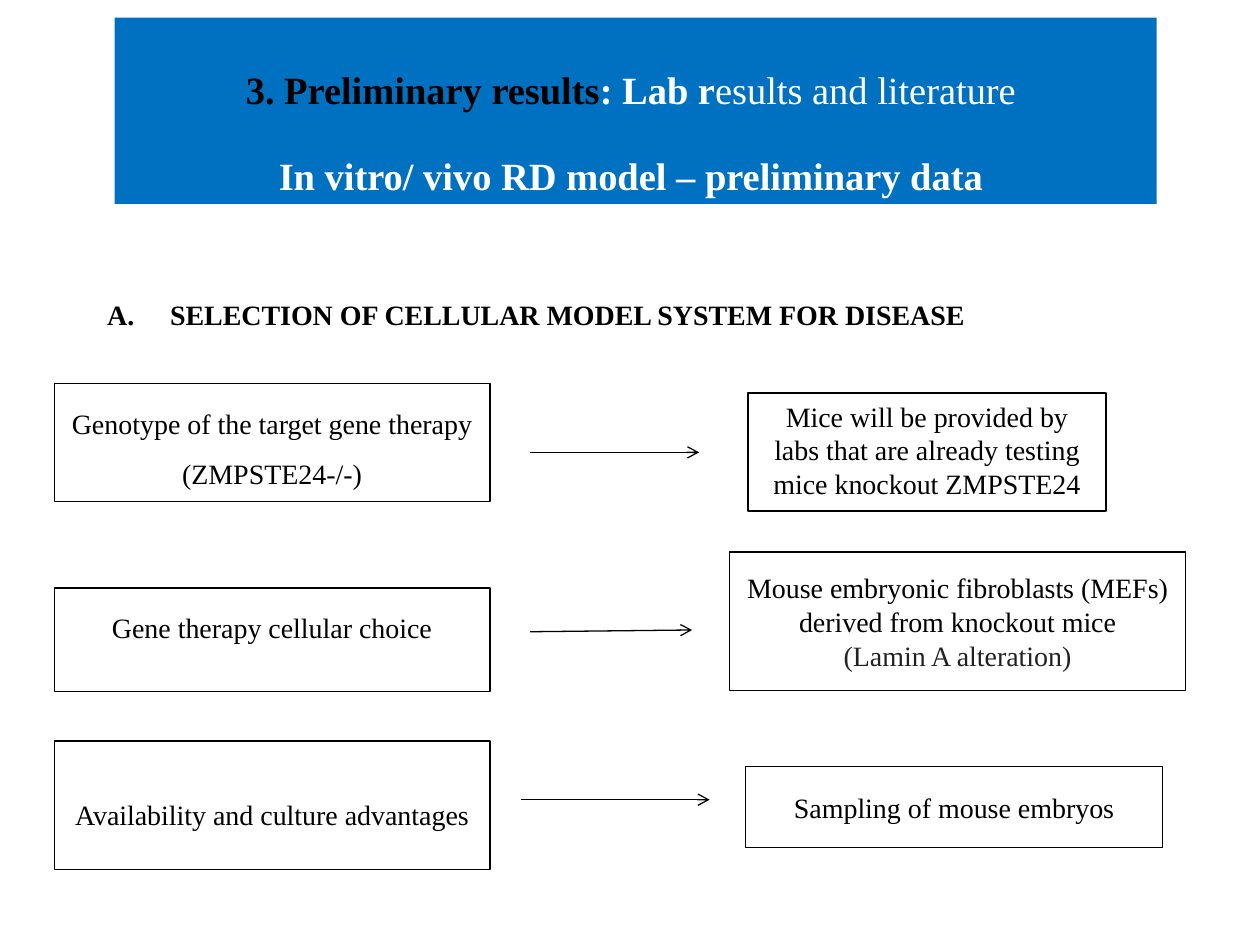
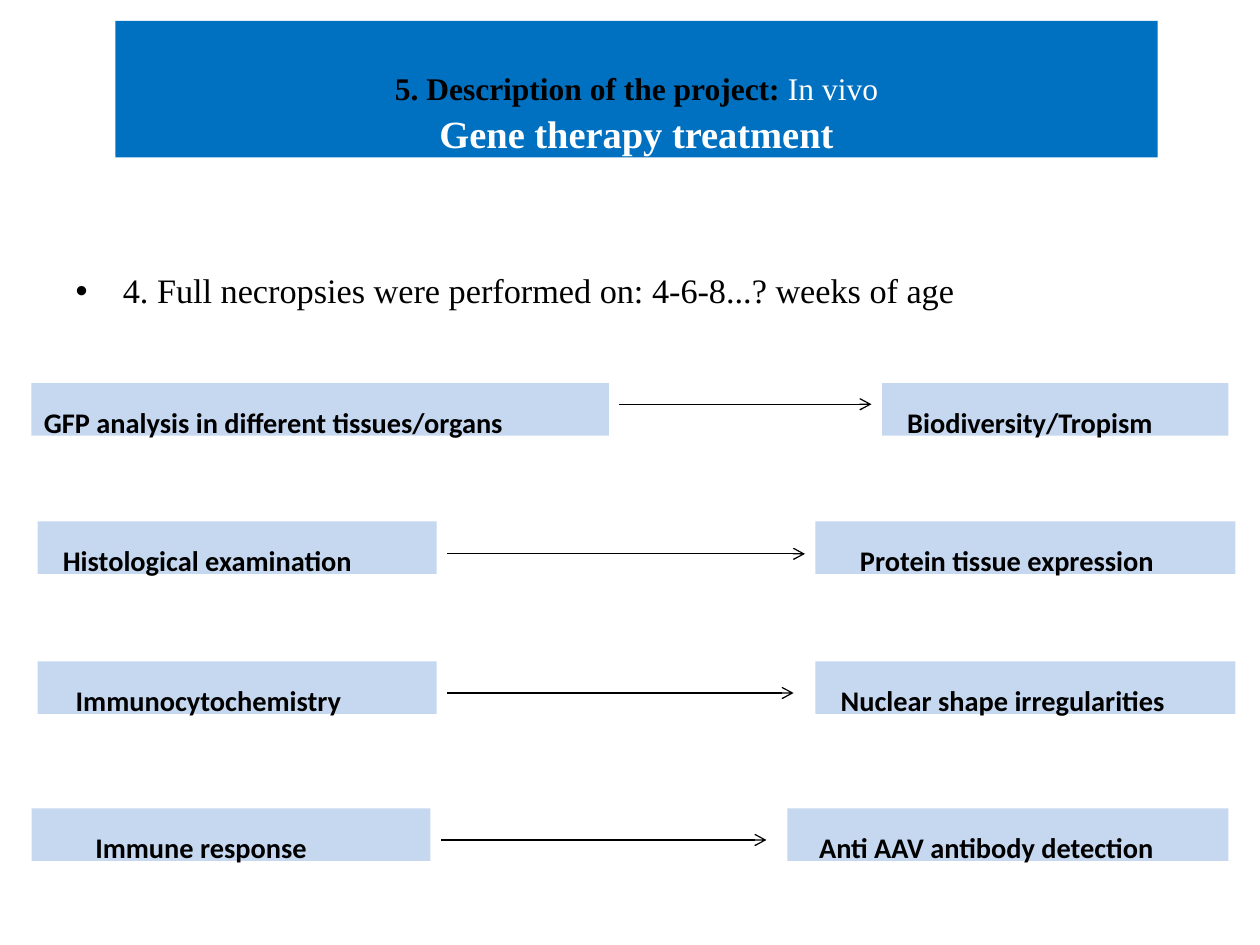
"""Build two slides on a gene therapy project: model selection and necropsy analyses."""
from lxml.etree import SubElement
from pptx import Presentation
from pptx.dml.color import RGBColor
from pptx.enum.shapes import MSO_CONNECTOR, MSO_SHAPE
from pptx.enum.text import MSO_ANCHOR, MSO_AUTO_SIZE, PP_ALIGN
from pptx.oxml.ns import qn
from pptx.util import Pt

BLACK, WHITE, GREY = "000000", "FFFFFF", "222222"
BAND_BLUE, LABEL_BLUE = "0070C0", "558ED5"
SERIF, SANS = "Times New Roman", "Calibri"
LABEL_HEIGHT, INDENT_STEP = 30, 3.67


def rgb(color):
    return RGBColor.from_string(color)


def style_font(font, color, bold):
    font.color.rgb = rgb(color)
    font.bold = bold


def write_paragraph(para, spans, size, name=SERIF, align=None, spacing=None, before=0):
    """Spans are (text, color, bold); the first one sets the paragraph font."""
    para.alignment = align
    para.line_spacing = spacing
    para.space_before = Pt(before)
    para.font.name = name
    para.font.size = Pt(size)
    style_font(para.font, *spans[0][1:])
    for text, color, bold in spans:
        run = para.add_run()
        run.text = text
        if (color, bold) != spans[0][1:]:
            style_font(run.font, color, bold)


def place(shape, left, top, width, height):
    shape.left, shape.top = Pt(left), Pt(top)
    shape.width, shape.height = Pt(width), Pt(height)


def prepare_frame(shape, anchor=MSO_ANCHOR.TOP, margin_top=3.6):
    frame = shape.text_frame
    frame.word_wrap = True
    frame.auto_size = MSO_AUTO_SIZE.NONE
    frame.vertical_anchor = anchor
    frame.margin_top = Pt(margin_top)
    return frame


def add_title_band(page, bounds, lines):
    """Lines are (spans, size, space before)."""
    title = page.shapes.title
    place(title, *bounds)
    title.fill.solid()
    title.fill.fore_color.rgb = rgb(BAND_BLUE)
    frame = prepare_frame(title, margin_top=27.5)
    for index, (spans, size, before) in enumerate(lines):
        para = frame.add_paragraph() if index else frame.paragraphs[0]
        write_paragraph(para, spans, size, align=PP_ALIGN.CENTER, before=before)


def add_list_item(page, bounds, text, size, indent, bold=False, spacing=None,
                  margin_top=3.6, numbering=None):
    body = page.placeholders[1]
    place(body, *bounds)
    para = prepare_frame(body, margin_top=margin_top).paragraphs[0]
    properties = para._p.get_or_add_pPr()
    properties.set("marL", str(Pt(indent)))
    properties.set("indent", str(-Pt(indent)))
    if numbering:
        SubElement(properties, qn("a:buFont"), typeface="+mj-lt")
        SubElement(properties, qn("a:buAutoNum"), type=numbering)
    write_paragraph(para, [(text, BLACK, bold)], size, spacing=spacing)


def add_rectangle(page, bounds, fill):
    box = page.shapes.add_shape(MSO_SHAPE.RECTANGLE, *map(Pt, bounds))
    box.shadow.inherit = False
    box.fill.solid()
    box.fill.fore_color.rgb = rgb(fill)
    return box


def add_outlined_box(page, bounds, lines, anchor=MSO_ANCHOR.TOP, spacing=None):
    """Lines are (text, color)."""
    box = add_rectangle(page, bounds, WHITE)
    box.line.color.rgb = rgb(BLACK)
    box.line.width = Pt(0.75)
    frame = prepare_frame(box, anchor)
    for index, (text, color) in enumerate(lines):
        para = frame.add_paragraph() if index else frame.paragraphs[0]
        write_paragraph(para, [(text, color, False)], 16,
                        align=PP_ALIGN.CENTER, spacing=spacing)


def add_label(page, left, top, width, text, steps):
    """A translucent label, its raised text indented by a number of steps."""
    label = add_rectangle(page, (left, top, width, LABEL_HEIGHT), LABEL_BLUE)
    color = label._element.spPr.find(".//" + qn("a:srgbClr"))
    SubElement(color, qn("a:alpha"), val="34000")
    label.line.fill.background()
    para = prepare_frame(label).paragraphs[0]
    para._p.get_or_add_pPr().set("marL", str(Pt(steps * INDENT_STEP)))
    write_paragraph(para, [(text, BLACK, True)], 28, name=SANS, align=PP_ALIGN.LEFT)
    para.runs[0].font._element.set("baseline", "10000")


def add_arrow(page, start, end, start_y, end_y):
    arrow = page.shapes.add_connector(
        MSO_CONNECTOR.STRAIGHT, Pt(start), Pt(start_y), Pt(end), Pt(end_y))
    arrow.line.color.rgb = rgb(BLACK)
    arrow.line.width = Pt(0.75)
    SubElement(arrow.line._get_or_add_ln(), qn("a:tailEnd"), type="arrow")
    SubElement(arrow._element.spPr, qn("a:effectLst"))


def build_model_selection(page):
    add_title_band(page, (65.5, 10, 595.5, 106.5), [
        ([("3. Preliminary results", BLACK, True), (": Lab r", WHITE, True),
          ("esults and literature ", WHITE, False)], 22, 0),
        ([("In vitro/ vivo RD model – preliminary data ", WHITE, True)], 22, 22.7),
    ])
    add_list_item(page, (54, 128, 595.5, 59),
                  "SELECTION OF CELLULAR MODEL SYSTEM FOR DISEASE", 16, 36,
                  bold=True, spacing=3.0, numbering="alphaUcPeriod")
    criteria = [
        (219, 67.5, MSO_ANCHOR.TOP,
         ["Genotype of the target gene therapy", "(ZMPSTE24-/-)"]),
        (336, 59, MSO_ANCHOR.TOP, ["Gene therapy cellular choice"]),
        (423.5, 73.5, MSO_ANCHOR.MIDDLE, ["Availability and culture advantages"]),
    ]
    for top, height, anchor, texts in criteria:
        add_outlined_box(page, (31, top, 249, height),
                         [(text, BLACK) for text in texts], anchor, 1.5)
    add_outlined_box(page, (427.5, 224.5, 204.5, 67.5), [
        ("Mice will be provided by labs that are already testing "
         "mice knockout ZMPSTE24", BLACK)])
    add_outlined_box(page, (417, 315.5, 260.5, 79), [
        ("Mouse embryonic fibroblasts (MEFs) derived from knockout mice", BLACK),
        ("(Lamin A alteration)", GREY)], MSO_ANCHOR.MIDDLE)
    add_outlined_box(page, (426, 438, 238.5, 46.5),
                     [("Sampling of mouse embryos", BLACK)], MSO_ANCHOR.MIDDLE)
    for arrow in [(303, 399.5, 258.5, 258.5), (303, 395.5, 361, 360),
                  (297.5, 405.5, 457, 457)]:
        add_arrow(page, *arrow)


def build_necropsy_analyses(page):
    add_title_band(page, (66, 12, 595.5, 78), [
        ([("5. Description of the project: ", BLACK, True),
          ("In vivo", WHITE, False)], 18, 0),
        ([("Gene therapy treatment", WHITE, True)], 22, 1.5),
    ])
    add_list_item(page, (36, 125, 648, 83),
                  "4. Full necropsies were performed on: 4-6-8...? weeks of age",
                  19.6, 27, margin_top=29)
    analyses = [
        (219, (18, 330, "GFP analysis in different tissues/organs", 0),
         (504, 198, "Biodiversity/Tropism", 2), (354, 498, 231)),
        (298, (21.5, 228, "Histological examination", 2),
         (466, 240, "Protein tissue expression", 5), (255.5, 460, 316.5)),
        (378, (21.5, 228, "Immunocytochemistry", 4),
         (466, 240, "Nuclear shape irregularities", 2), (255.5, 453.5, 396)),
        (462, (18, 228, "Immune response", 8),
         (450, 252, "Anti AAV antibody detection", 3), (252, 438, 480)),
    ]
    for top, method, finding, (start, end, level) in analyses:
        for left, width, text, steps in (method, finding):
            add_label(page, left, top, width, text, steps)
        add_arrow(page, start, end, level, level)


def main():
    deck = Presentation()
    deck.slide_width, deck.slide_height = Pt(720), Pt(540)
    for build in (build_model_selection, build_necropsy_analyses):
        build(deck.slides.add_slide(deck.slide_layouts[1]))
    deck.save("out.pptx")


if __name__ == "__main__":
    main()
